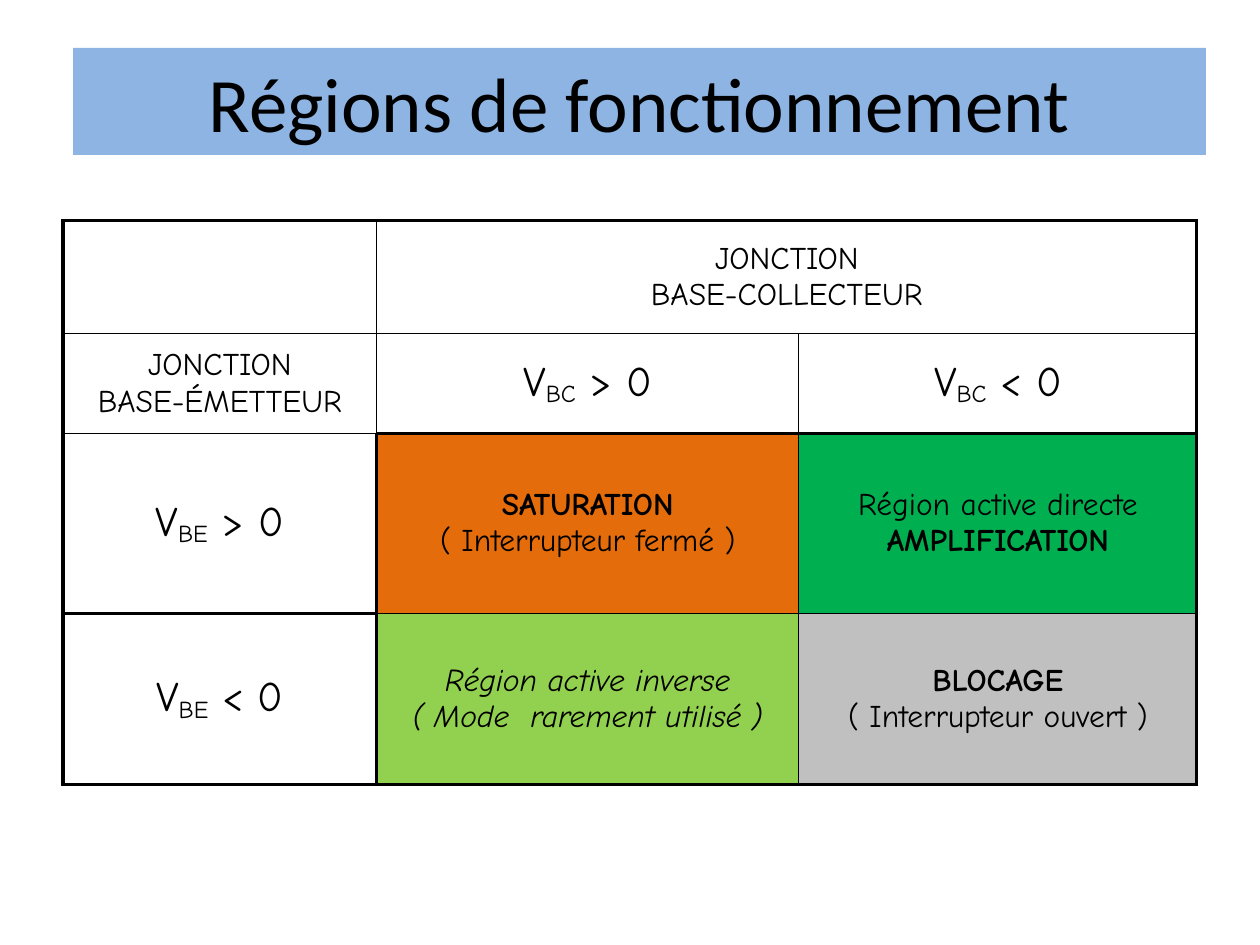
import pptx
import pptx.dml.color
import pptx.enum.shapes
import pptx.enum.text
import pptx.oxml.ns
import pptx.util
import lxml.etree

Inches = pptx.util.Inches
Pt = pptx.util.Pt
ANCHOR = pptx.enum.text.MSO_ANCHOR.MIDDLE
CENTER = pptx.enum.text.PP_ALIGN.CENTER

COLS = [2.49, 3.35, 3.16]
ROWS = [0.9, 0.79, 1.43, 1.36]
THIN, THICK = 0.75, 2
ACROSS = [
    [THICK, THICK, THICK],
    [THIN, THIN, THIN],
    [THIN, THICK, THICK],
    [THICK, THIN, THIN],
    [THICK, THICK, THICK],
]
DOWN = [
    [THICK, THIN, THICK, THICK],
    [THICK, THIN, THIN, THICK],
    [THICK, THICK, THIN, THICK],
    [THICK, THICK, THIN, THICK],
]


def color(code):
    return pptx.dml.color.RGBColor.from_string(code)


def write(para, text, size=18, font="Comic Neue", bold=False, italic=False, base=0):
    run = para.add_run()
    run.text = text
    run.font.size = Pt(size)
    run.font.name = font
    run.font.bold = bold
    run.font.italic = italic
    run.font.color.rgb = color("000000")
    if base:
        run.font._element.set("baseline", str(base * 1000))


def center(para, hang=0):
    para.alignment = CENTER
    if hang:
        props = para._p.get_or_add_pPr()
        props.set("marL", str(Inches(hang)))
        props.set("indent", str(Inches(-hang)))


def line(text, **style):
    return [(text, style)]


def volts(sub, sign):
    return [[("V", {"size": 24}), (sub, {"size": 24, "base": -15}),
             (f" {sign} 0", {"size": 24})]]


def border(cell, side, width):
    props = cell._tc.get_or_add_tcPr()
    qn = pptx.oxml.ns.qn
    edge = lxml.etree.SubElement(props, qn(f"a:ln{side}"), w=str(Pt(width)))
    fill = lxml.etree.SubElement(edge, qn("a:solidFill"))
    lxml.etree.SubElement(fill, qn("a:srgbClr"), val="000000")


def frame(cell, row, col):
    border(cell, "L", DOWN[row][col])
    border(cell, "R", DOWN[row][col + 1])
    border(cell, "T", ACROSS[row][col])
    border(cell, "B", ACROSS[row + 1][col])


def fill_cell(cell, lines, fill=None):
    cell.vertical_anchor = ANCHOR
    if fill:
        cell.fill.solid()
        cell.fill.fore_color.rgb = color(fill)
    else:
        cell.fill.background()
    body = cell.text_frame
    for num, runs in enumerate(lines):
        para = body.paragraphs[0] if num == 0 else body.add_paragraph()
        center(para, hang=0.38)
        for text, style in runs:
            write(para, text, **style)


def add_title(slide, text):
    box = slide.shapes.add_shape(
        pptx.enum.shapes.MSO_SHAPE.RECTANGLE,
        Inches(0.58), Inches(0.38), Inches(8.99), Inches(0.85))
    box.shadow.inherit = False
    box.fill.solid()
    box.fill.fore_color.rgb = color("8EB4E3")
    box.line.fill.background()
    box.text_frame.word_wrap = True
    box.text_frame.vertical_anchor = ANCHOR
    para = box.text_frame.paragraphs[0]
    center(para)
    write(para, text, size=44, font="Calibri")


def add_grid(slide, cells):
    table = slide.shapes.add_table(
        len(ROWS), len(COLS), Inches(0.5), Inches(1.75),
        Inches(sum(COLS)), Inches(sum(ROWS))).table
    table.first_row = False
    table.horz_banding = False
    for col, width in zip(table.columns, COLS):
        col.width = Inches(width)
    for row, height in zip(table.rows, ROWS):
        row.height = Inches(height)
    table.cell(0, 1).merge(table.cell(0, 2))
    for row in range(len(ROWS)):
        for col in range(len(COLS)):
            cell = table.cell(row, col)
            frame(cell, row, col)
            fill_cell(cell, *cells[row][col])


def main():
    deck = pptx.Presentation()
    deck.slide_width = Inches(10)
    deck.slide_height = Inches(7.5)
    slide = deck.slides.add_slide(deck.slide_layouts[6])
    add_title(slide, "Régions de fonctionnement")
    blank = ([],)
    add_grid(slide, [
        [blank, ([line("JONCTION"), line("BASE-COLLECTEUR")],), blank],
        [([line("JONCTION"), line("BASE-ÉMETTEUR")],),
         (volts("BC", ">"),), (volts("BC", "<"),)],
        [(volts("BE", ">"),),
         ([line("SATURATION", bold=True), line("( Interrupteur fermé )")], "E46C0A"),
         ([line("Région active directe"), line("AMPLIFICATION", bold=True)], "00B050")],
        [(volts("BE", "<"),),
         ([line("Région active inverse", italic=True),
           line("( Mode  rarement utilisé )", italic=True)], "92D050"),
         ([line("BLOCAGE", bold=True), line("( Interrupteur ouvert )")], "C0C0C0")],
    ])
    deck.save("out.pptx")


if __name__ == "__main__":
    main()
